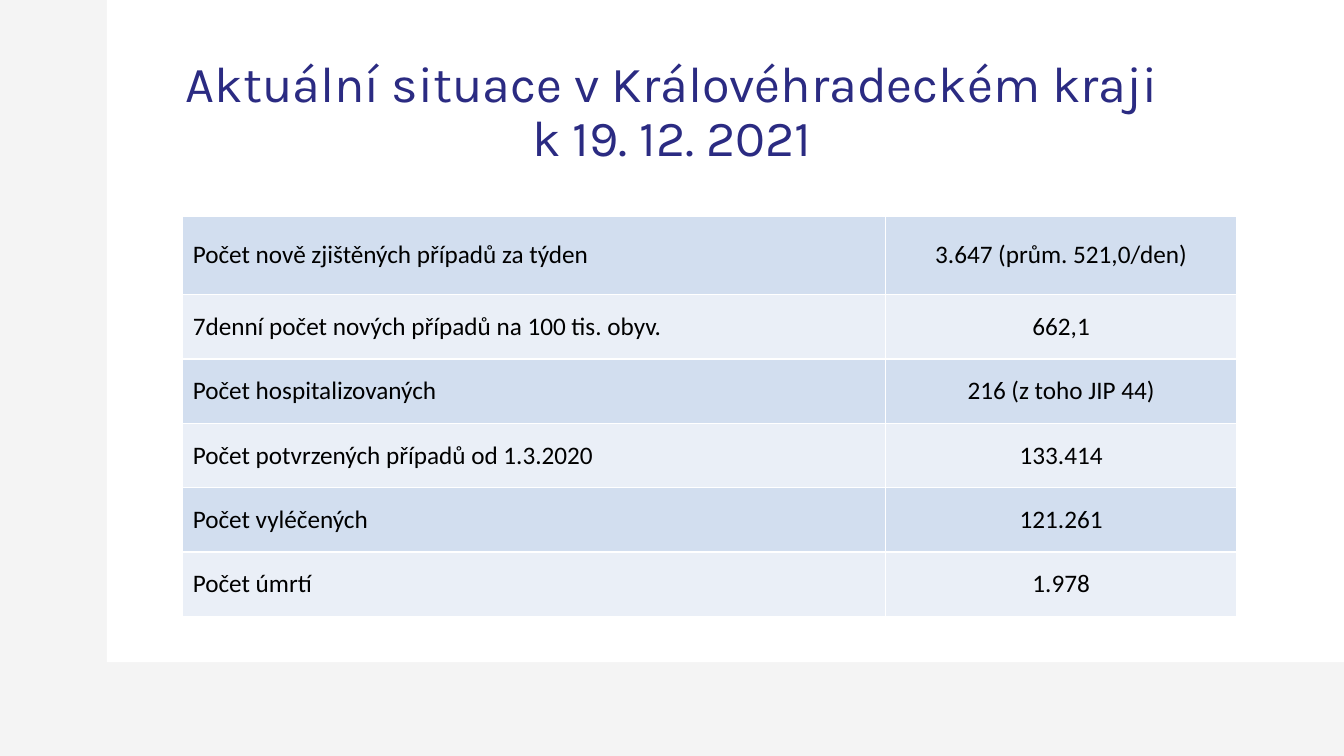
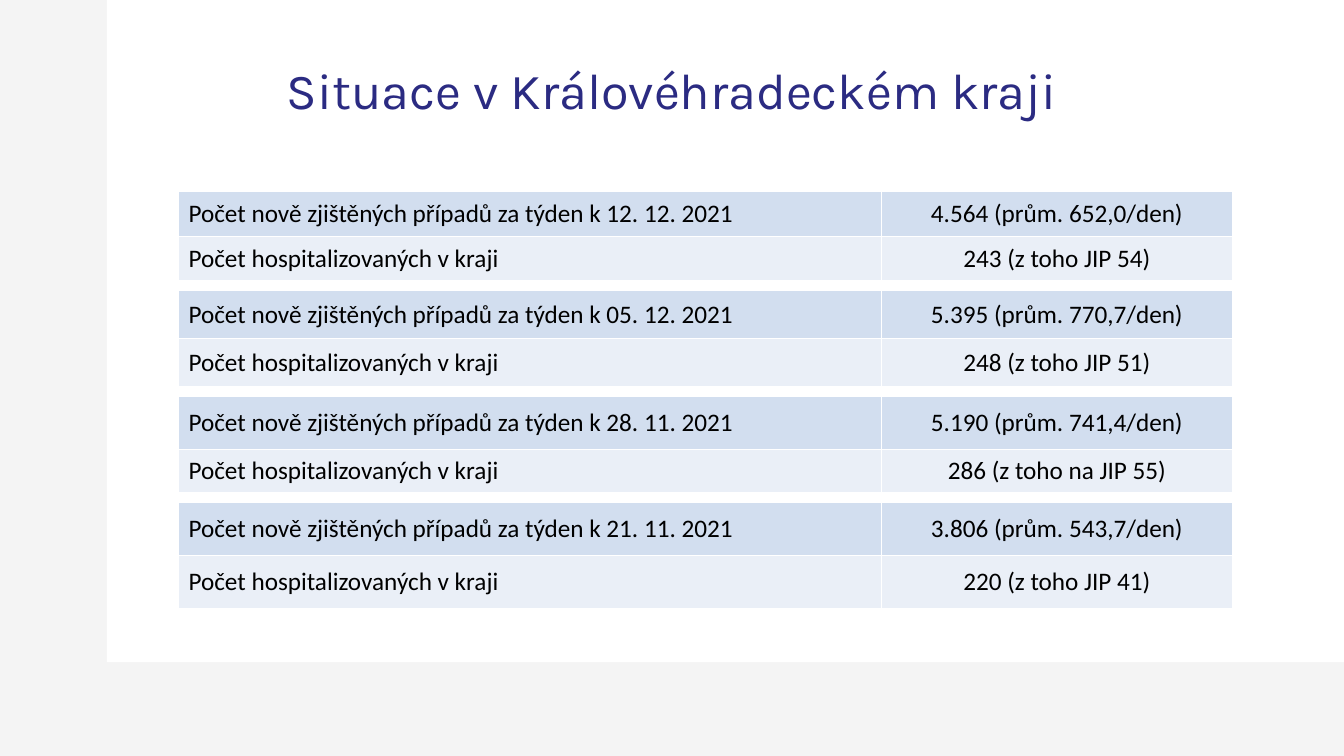
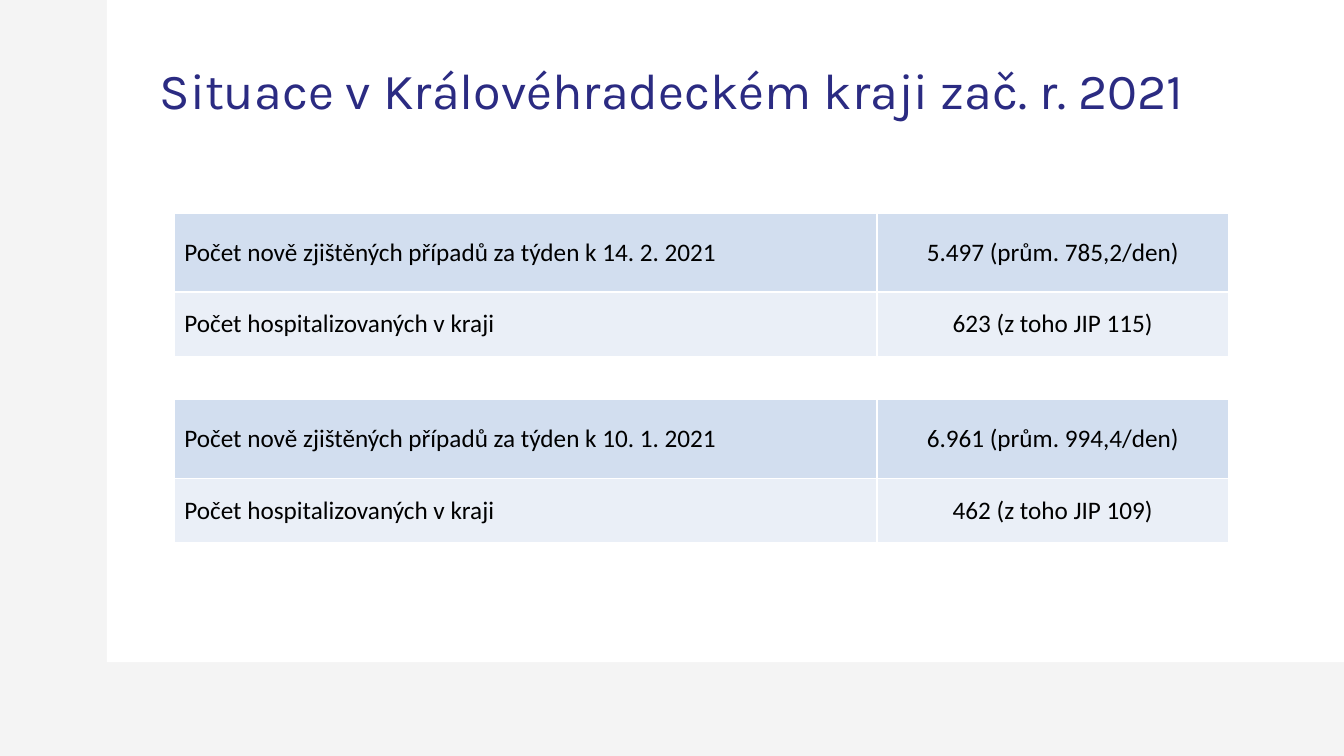
from pptx import Presentation
from pptx.dml.color import RGBColor
from pptx.enum import shapes, text
from pptx.oxml import parse_xml
from pptx.oxml.ns import nsdecls
from pptx.util import Pt

COLOURS = {
    "backdrop": "F4F4F4",
    "panel": "FFFFFF",
    "title": "2B2B82",
    "text": "000000",
    "border": "FFFFFF",
    "row_dark": "D2DEEF",
    "row_light": "EAEFF7",
}
WIDTH, HEIGHT = 960, 540
COLUMNS = (502, 251)
NEW_CASES = "Počet nově zjištěných případů za týden k "
HOSPITALIZED = "Počet hospitalizovaných v kraji"


def colour(name):
    return RGBColor.from_string(COLOURS[name])


class Deck:
    def __init__(self):
        self.presentation = Presentation()
        self.presentation.slide_width = Pt(WIDTH)
        self.presentation.slide_height = Pt(HEIGHT)
        self.slide = None

    def add_slide(self, title, title_height=75.6):
        self.slide = self.presentation.slides.add_slide(self.presentation.slide_layouts[6])
        fill = self.slide.background.fill
        fill.solid()
        fill.fore_color.rgb = colour("backdrop")
        self.panel(76.4, 0, WIDTH - 76.4, 473)
        self.title(title, title_height)

    def panel(self, left, top, width, height):
        shape = self.slide.shapes.add_shape(
            shapes.MSO_SHAPE.RECTANGLE, Pt(left), Pt(top), Pt(width), Pt(height))
        shape.shadow.inherit = False
        shape.fill.solid()
        shape.fill.fore_color.rgb = colour("panel")
        shape.line.fill.background()

    def title(self, title, height):
        box = self.slide.shapes.add_textbox(Pt(66), Pt(28.8), Pt(828), Pt(height))
        frame = box.text_frame
        frame.word_wrap = True
        frame.vertical_anchor = text.MSO_ANCHOR.MIDDLE
        paragraph = frame.paragraphs[0]
        paragraph.text = title
        paragraph.line_spacing = 0.9
        self.style(paragraph, "Karla", 36, "title", text.PP_ALIGN.CENTER)

    def style(self, paragraph, font, size, colour_name, alignment):
        paragraph.alignment = alignment
        paragraph.font.name = font
        paragraph.font.size = Pt(size)
        paragraph.font.color.rgb = colour(colour_name)

    def table(self, left, top, rows, heights):
        """Draw label and value rows; return the bottom edge of the table."""
        total = sum(heights)
        table = self.slide.shapes.add_table(
            len(rows), len(COLUMNS), Pt(left), Pt(top), Pt(sum(COLUMNS)), Pt(total)).table
        table.first_row = False
        table.horz_banding = False
        for column, width in zip(table.columns, COLUMNS):
            column.width = Pt(width)
        for index, (values, height) in enumerate(zip(rows, heights)):
            table.rows[index].height = Pt(height)
            fill_name = "row_light" if index % 2 else "row_dark"
            for position, value in enumerate(values):
                self.cell(table.cell(index, position), value, fill_name,
                          text.PP_ALIGN.CENTER if position else text.PP_ALIGN.LEFT)
        return top + total

    def cell(self, cell, value, fill_name, alignment):
        properties = cell._tc.get_or_add_tcPr()
        for side in "LRTB":
            properties.append(parse_xml(
                f'<a:ln{side} {nsdecls("a")} w="{Pt(1)}"><a:solidFill>'
                f'<a:srgbClr val="{COLOURS["border"]}"/></a:solidFill></a:ln{side}>'))
        cell.fill.solid()
        cell.fill.fore_color.rgb = colour(fill_name)
        cell.vertical_anchor = text.MSO_ANCHOR.MIDDLE
        paragraph = cell.text_frame.paragraphs[0]
        paragraph.text = value
        self.style(paragraph, "Calibri", 18, "text", alignment)

    def weeks(self, left, top, gap, weeks):
        """Stack one two-row table per week, with equal gaps."""
        for date, cases, patients, heights in weeks:
            rows = [(NEW_CASES + date, cases), (HOSPITALIZED, patients)]
            top = self.table(left, top, rows, heights) + gap


def main():
    deck = Deck()

    deck.add_slide("Aktuální situace v Královéhradeckém kraji\vk 19. 12. 2021", 104.4)
    deck.table(130.5, 154.4, [
        ("Počet nově zjištěných případů za týden", "3.647 (prům. 521,0/den)"),
        ("7denní počet nových případů na 100 tis. obyv.", "662,1"),
        ("Počet hospitalizovaných", "216 (z toho JIP 44)"),
        ("Počet potvrzených případů od 1.3.2020", "133.414"),
        ("Počet vyléčených", "121.261"),
        ("Počet úmrtí", "1.978"),
    ], [56] + [46] * 5)

    deck.add_slide("Situace v Královéhradeckém kraji")
    deck.weeks(127.5, 136.8, 6.6, [
        ("12. 12. 2021", "4.564 (prům. 652,0/den)", "243 (z toho JIP 54)", (32, 32)),
        ("05. 12. 2021", "5.395 (prům. 770,7/den)", "248 (z toho JIP 51)", (34.5, 34.5)),
        ("28. 11. 2021", "5.190 (prům. 741,4/den)", "286 (z toho na JIP 55)", (38, 31)),
        ("21. 11. 2021", "3.806 (prům. 543,7/den)", "220 (z toho JIP 41)", (38, 38)),
    ])

    deck.add_slide("Situace v Královéhradeckém kraji zač. r. 2021")
    deck.weeks(124.5, 152.6, 31, [
        ("14. 2. 2021", "5.497 (prům. 785,2/den)", "623 (z toho JIP 115)", (56, 46)),
        ("10. 1. 2021", "6.961 (prům. 994,4/den)", "462 (z toho JIP 109)", (56, 46)),
    ])

    deck.presentation.save("out.pptx")


if __name__ == "__main__":
    main()
